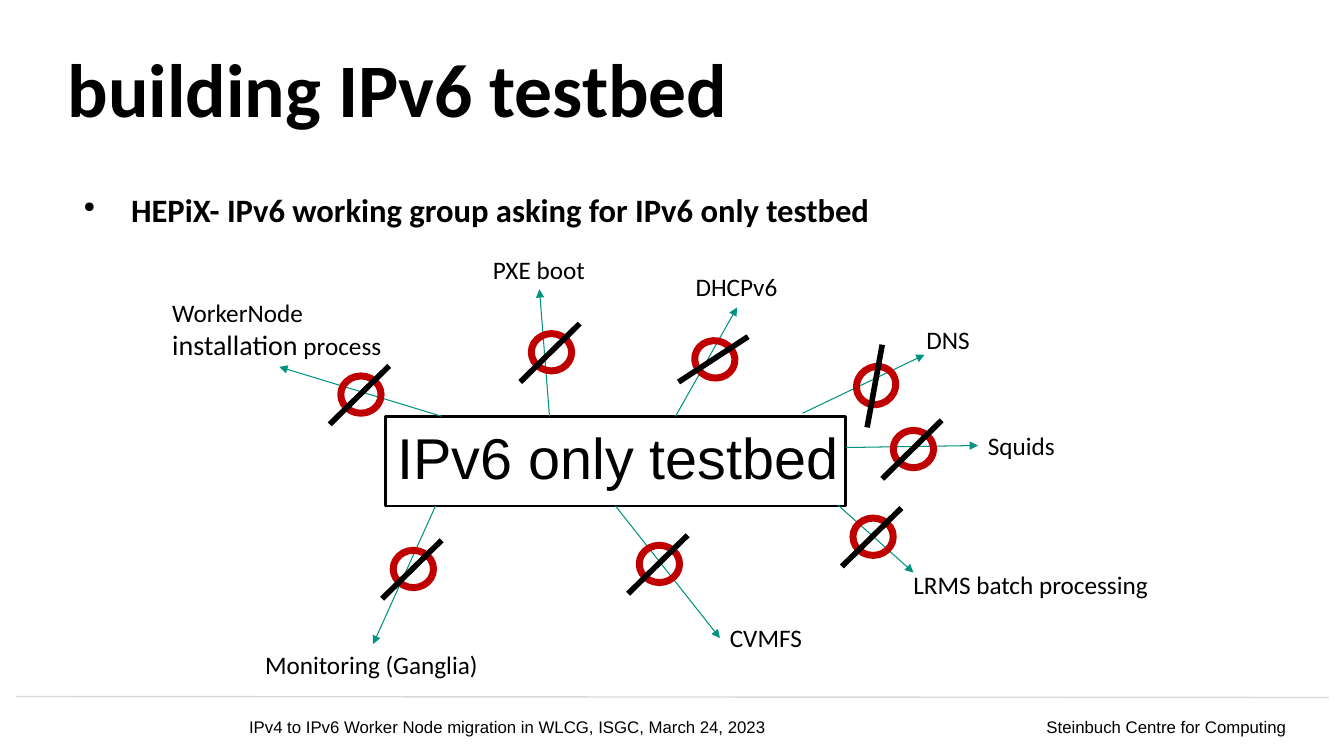
from dataclasses import dataclass
from typing import Any

from lxml.etree import SubElement
from pptx import Presentation
from pptx.dml.color import RGBColor
from pptx.enum.shapes import MSO_CONNECTOR, MSO_SHAPE
from pptx.enum.text import MSO_ANCHOR as Anchor, MSO_AUTO_SIZE as AutoSize, PP_ALIGN as Align
from pptx.oxml.ns import qn
from pptx.util import Emu, Pt

PX = 9144
BLACK = RGBColor(0x00, 0x00, 0x00)
TEAL = RGBColor(0x00, 0x93, 0x7F)
RED = RGBColor(0xC0, 0x00, 0x00)
PALE_GREY = RGBColor(0xD9, 0xD9, 0xD9)

Point = tuple[int, int]
Box = tuple[int, int, int, int]
TextRun = tuple[str, float]

RING_SIZE = (40, 37)
SLASH_START = (-11, 48)
SLASH_END = (48, -10)
BOTTOM_SIDE = 2


@dataclass(frozen=True)
class Heading:
    text: str
    box: Box
    size: float
    font: str = "Calibri"
    bold: bool = False
    spacing: float = 1.0
    align: Align = Align.LEFT
    bullet: bool = False


@dataclass(frozen=True)
class Service:
    lines: tuple[tuple[TextRun, ...], ...]
    box: Box
    start: Point
    tip: Point
    from_bottom_middle: bool = False


@dataclass(frozen=True)
class Barrier:
    ring: Point
    rotation: float = 0
    slash: tuple[Point, Point] | None = None


HEADINGS = (
    Heading("IPv4 to IPv6 Worker Node migration in WLCG, ISGC, March 24, 2023",
            (247, 692, 549, 58), 12, "Arial"),
    Heading("Steinbuch Centre for Computing", (803, 692, 473, 58), 12, "Arial", align=Align.RIGHT),
    Heading("HEPiX- IPv6 working group asking for IPv6 only testbed",
            (67, 175, 1200, 75), 23.3, bold=True, spacing=0.7, bullet=True),
    Heading("building IPv6 testbed", (67, 30, 1200, 125), 54, bold=True, spacing=0.9),
)

SERVICES = (
    Service(((("WorkerNode", 18),), (("installation", 20), (" process", 18))),
            (161, 290, 230, 74), (438, 413), (277, 364)),
    Service(((("PXE boot", 18),),), (479, 247, 132, 44), (545, 413), (535, 287)),
    Service(((("DHCPv6", 18),),), (680, 264, 102, 40), (670, 413), (731, 305)),
    Service(((("DNS", 18),),), (909, 317, 64, 40), (796, 410), (917, 352)),
    Service(((("Squids", 18),),), (970, 422, 87, 40), (839, 444), (970, 442)),
    Service(((("CVMFS", 18),),), (714, 612, 119, 44), (611, 502), (714, 633), True),
    Service(((("Monitoring (Ganglia)", 18),),), (253, 639, 262, 44), (432, 502), (370, 639)),
    Service(((("LRMS batch processing", 18),),), (896, 560, 318, 44), (831, 501), (906, 568)),
)

BARRIERS = (
    Barrier((390, 546)),
    Barrier((634, 541)),
    Barrier((886, 427)),
    Barrier((849, 364), 324.6, ((860, 424), (875, 342))),
    Barrier((689, 338), 11.3, ((673, 379), (742, 334))),
    Barrier((527, 331)),
    Barrier((338, 373)),
    Barrier((846, 514)),
)


def emu(lengths: tuple[int, ...]) -> list[Emu]:
    return [Emu(length * PX) for length in lengths]


def set_format(target: Any, values: dict[str, Any]) -> None:
    for attribute, value in values.items():
        setattr(target, attribute, value)


def add_run(paragraph: Any, text: str, size: float, font: str = "Calibri",
            bold: bool = False) -> None:
    run = paragraph.add_run()
    run.text = text
    set_format(run.font, {"name": font, "size": Pt(size), "bold": bold})
    run.font.color.rgb = BLACK


def add_bullet(paragraph: Any) -> None:
    properties = paragraph._p.get_or_add_pPr()
    set_format(paragraph, {"line_spacing": paragraph.line_spacing})
    properties.set("marL", str(63 * PX))
    properties.set("indent", str(-47 * PX))
    colour = SubElement(properties, qn("a:buClr"))
    SubElement(colour, qn("a:srgbClr"), val=str(BLACK))
    SubElement(properties, qn("a:buSzPct"), val="45000")
    SubElement(properties, qn("a:buChar"), char="●")


def add_heading(shapes: Any, heading: Heading) -> None:
    frame = shapes.add_textbox(*emu(heading.box)).text_frame
    set_format(frame, {"word_wrap": True, "vertical_anchor": Anchor.MIDDLE, "margin_left": 0,
                       "margin_top": 0, "margin_right": 0, "margin_bottom": 0})
    paragraph = frame.paragraphs[0]
    set_format(paragraph, {"alignment": heading.align, "line_spacing": heading.spacing})
    if heading.bullet:
        add_bullet(paragraph)
    add_run(paragraph, heading.text, heading.size, heading.font, heading.bold)


def add_line(shapes: Any, start: Point, end: Point, colour: RGBColor, width: float,
             arrow: bool = False) -> Any:
    line = shapes.add_connector(MSO_CONNECTOR.STRAIGHT, *emu(start + end))
    line.line.color.rgb = colour
    line.line.width = Pt(width)
    properties = line._element.spPr
    if arrow:
        SubElement(properties.get_or_add_ln(), qn("a:tailEnd"), type="triangle")
    SubElement(properties, qn("a:effectLst"))
    return line


def add_outline(shapes: Any, preset: MSO_SHAPE, box: Box, colour: RGBColor, width: float) -> Any:
    outline = shapes.add_shape(preset, *emu(box))
    outline.shadow.inherit = False
    outline.fill.background()
    outline.line.color.rgb = colour
    outline.line.width = Pt(width)
    return outline


def add_testbed(shapes: Any) -> Any:
    testbed = add_outline(shapes, MSO_SHAPE.RECTANGLE, (382, 413, 457, 89), BLACK, 2)
    frame = testbed.text_frame
    set_format(frame, {"word_wrap": True, "vertical_anchor": Anchor.MIDDLE,
                       "margin_left": Emu(12 * PX), "margin_top": Emu(8 * PX),
                       "margin_right": 0, "margin_bottom": 0})
    paragraph = frame.paragraphs[0]
    set_format(paragraph, {"alignment": Align.LEFT, "line_spacing": 0.7})
    add_run(paragraph, "IPv6 only testbed", 41.1, "Arial")
    return testbed


def add_service(shapes: Any, service: Service, testbed: Any) -> None:
    members = shapes.add_group_shape().shapes
    frame = members.add_textbox(*emu(service.box)).text_frame
    set_format(frame, {"word_wrap": False, "auto_size": AutoSize.SHAPE_TO_FIT_TEXT})
    paragraph = frame.paragraphs[0]
    for index, runs in enumerate(service.lines):
        if index:
            paragraph.add_line_break()
        for text, size in runs:
            add_run(paragraph, text, size)
    arrow = add_line(members, service.start, service.tip, TEAL, 0.75, arrow=True)
    if service.from_bottom_middle:
        arrow.begin_connect(testbed, BOTTOM_SIDE)


def add_barrier(shapes: Any, barrier: Barrier) -> None:
    members = shapes.add_group_shape().shapes
    ring = add_outline(members, MSO_SHAPE.OVAL, barrier.ring + RING_SIZE, RED, 5)
    ring.rotation = barrier.rotation
    left, top = barrier.ring
    start, end = barrier.slash or [(left + dx, top + dy) for dx, dy in (SLASH_START, SLASH_END)]
    add_line(members, start, end, BLACK, 4)


def main() -> None:
    deck = Presentation()
    set_format(deck, {"slide_width": Emu(1333 * PX), "slide_height": Emu(750 * PX)})
    shapes = deck.slides.add_slide(deck.slide_layouts[6]).shapes
    add_line(shapes, (16, 691), (1318, 692), PALE_GREY, 1)
    for heading in HEADINGS:
        add_heading(shapes, heading)
    testbed = add_testbed(shapes)
    for service in SERVICES:
        add_service(shapes, service, testbed)
    for barrier in BARRIERS:
        add_barrier(shapes, barrier)
    deck.save("out.pptx")


if __name__ == "__main__":
    main()
